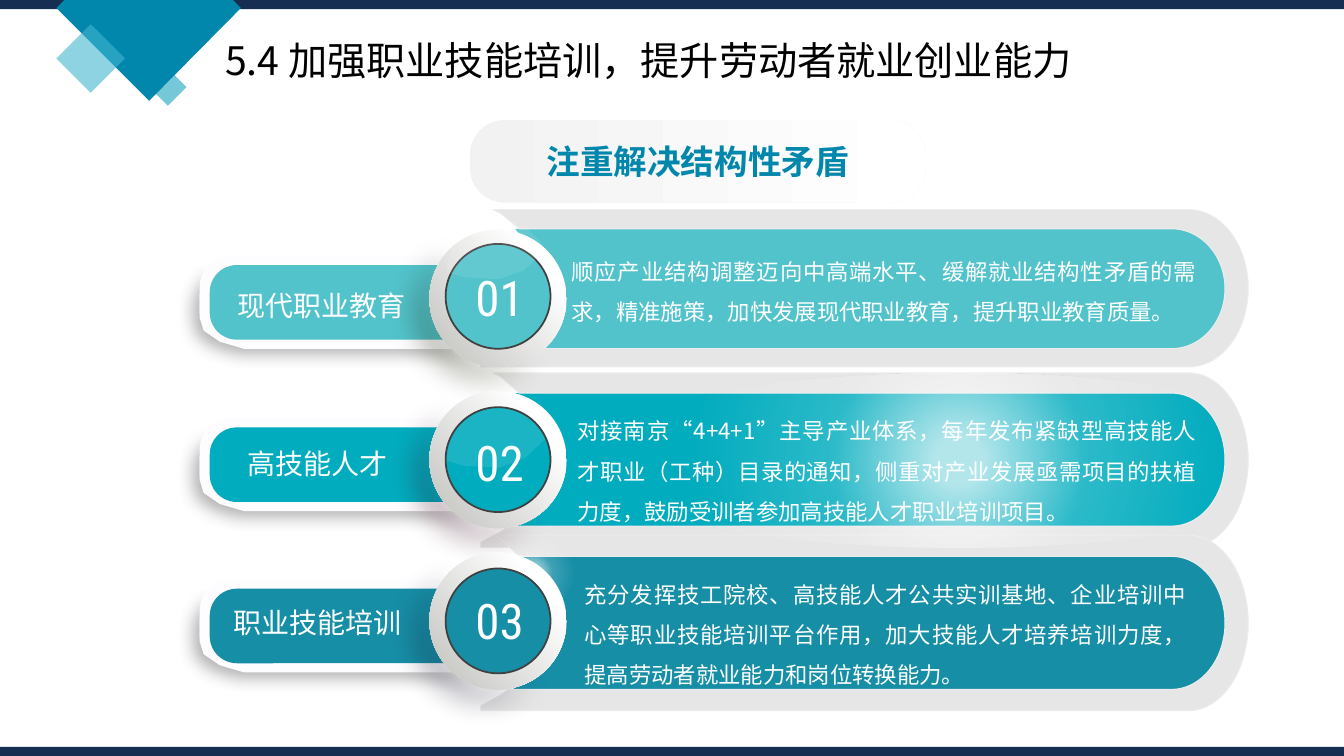
from math import cos, sin, radians
from lxml.etree import SubElement
from pptx import Presentation
from pptx.dml.color import RGBColor
from pptx.enum.shapes import MSO_SHAPE
from pptx.enum.text import MSO_ANCHOR, PP_ALIGN
from pptx.oxml import parse_xml
from pptx.oxml.ns import nsdecls, qn
from pptx.util import Pt

PX = 9144


class Theme:
    font, digit = "Noto Sans CJK SC", "Roboto Condensed"
    title, head, label, body, count = 28, 24, 20, 16, 35
    navy, blue, sky, aqua = "152E52", "0187AC", "41B7D0", "1AA4BE"
    white, black, tab, rim = "FFFFFF", "000000", "FDFCFE", "404040"
    grey, edge = "E6E6E6", "ECECEC"
    rows = "52C3CB", "01ACBE", "168EA6"
    shades = "1F2006", "380A21", "181930"
    pill = [(0, "F2F2F2", 100), (99, "FFFFFF", 100)]
    pearl = [(20, "FFFFFF", 100), (92, "C7C8C4", 100)]
    glow = [(6, "FFFFFF", 70), (32, "FFFFFF", 17), (67, "FFFFFF", 0)]


deck = Presentation()
deck.slide_width, deck.slide_height = 1333 * PX, 750 * PX
slide = deck.slides.add_slide(deck.slide_layouts[5])
shapes = slide.shapes


def form(kind, place, fill, alpha=100, angle=None, line=None, width=1, round=None, shade=None):
    if kind:
        shape = shapes.add_shape(kind, *[v * PX for v in place])
    else:
        dots = [(x * PX, y * PX) for x, y in place]
        pen = shapes.build_freeform(*dots[0])
        pen.add_line_segments(dots[1:], close=True)
        shape = pen.convert_to_shape()
    shape.shadow.inherit = False
    props = shape._element.spPr
    if round:
        shape.adjustments[0] = round
    if isinstance(fill, str):
        shape.fill.solid()
        shape.fill.fore_color.rgb = RGBColor.from_string(fill)
        if alpha < 100:
            SubElement(props.find(".//" + qn("a:srgbClr")), qn("a:alpha"), val=str(alpha * 1000))
    else:
        shape.fill.gradient()
        stops = "".join(
            f'<a:gs pos="{p * 1000}"><a:srgbClr val="{c}"><a:alpha val="{a * 1000}"/></a:srgbClr></a:gs>'
            for p, c, a in fill)
        way = (f'<a:lin ang="{angle * 60000}" scaled="0"/>' if angle is not None else
               '<a:path path="circle"><a:fillToRect l="50000" t="50000" r="50000" b="50000"/></a:path>')
        props.replace(props.find(qn("a:gradFill")), parse_xml(
            f'<a:gradFill {nsdecls("a")}><a:gsLst>{stops}</a:gsLst>{way}</a:gradFill>'))
    if line:
        shape.line.color.rgb = RGBColor.from_string(line)
        shape.line.width = Pt(width)
    else:
        shape.line.fill.background()
    if shade:
        tint, dark, blur, far = shade
        cast = SubElement(props.find(qn("a:effectLst")), qn("a:outerShdw"), blurRad=str(Pt(blur)),
                          dist=str(Pt(far)), dir=str(140 * 60000), algn="ctr", rotWithShape="0")
        tone = SubElement(cast, qn("a:srgbClr"), val=tint)
        SubElement(tone, qn("a:alpha"), val=str(dark * 1000))
    return shape


def write(host, text, size, color=Theme.white, font=Theme.font, bold=False,
          align=PP_ALIGN.CENTER, anchor=MSO_ANCHOR.TOP, space=None):
    if isinstance(host, tuple):
        host = shapes.add_textbox(*[v * PX for v in host])
    frame = host.text_frame
    frame.word_wrap = True
    frame.vertical_anchor = anchor
    para = frame.paragraphs[0]
    para.alignment = align
    if space:
        para.line_spacing = space
    run = para.add_run()
    run.text = text
    run.font.size, run.font.bold, run.font.name = Pt(size), bold, font
    run.font.color.rgb = RGBColor.from_string(color)
    mark = run._r.get_or_add_rPr()
    mark.set("lang", "zh-CN")
    SubElement(mark, qn("a:ea"), typeface=font)


title = shapes.title
title.left, title.top, title.width, title.height = [v * PX for v in (68, 26, 1150, 73)]
write(title, "5.4 加强职业技能培训，提升劳动者就业创业能力", Theme.title,
      color=Theme.black, anchor=MSO_ANCHOR.MIDDLE, space=0.9)

form(MSO_SHAPE.DIAMOND, (148, 68, 37, 37), Theme.aqua, alpha=60)
for top in (0, 741):
    form(MSO_SHAPE.RECTANGLE, (0, top, 1333, 9), Theme.navy)
form(None, [(64, 0), (231, 0), (239, 8), (148, 100), (56, 8)], Theme.blue)
form(MSO_SHAPE.DIAMOND, (56, 24, 68, 68), Theme.sky, alpha=60)

head = form(MSO_SHAPE.ROUNDED_RECTANGLE, (466, 119, 452, 82), Theme.pill, angle=0, round=0.423)
write(head, "注重解决结构性矛盾", Theme.head, color=Theme.blue, bold=True, anchor=MSO_ANCHOR.MIDDLE)

bands = [
    (208, 156, 227, 119, (557, 238, 640, 91),
     "顺应产业结构调整迈向中高端水平、缓解就业结构性矛盾的需求，精准施策，加快发展现代职业教育，提升职业教育质量。"),
    (370, 173, 390, 132, (563, 396, 634, 131),
     "对接南京“4+4+1”主导产业体系，每年发布紧缺型高技能人才职业（工种）目录的通知，侧重对产业发展亟需项目的扶植力度，鼓励受训者参加高技能人才职业培训项目。"),
    (531, 174, 552, 132, (570, 558, 617, 131),
     "充分发挥技工院校、高技能人才公共实训基地、企业培训中心等职业技能培训平台作用，加大技能人才培养培训力度，提高劳动者就业能力和岗位转换能力。"),
]
turn = [radians(a) for a in range(-90, 91, 5)]
for (top, high, core, deep, box, text), color in zip(bands, Theme.rows):
    mid, low = core + deep / 2, core + deep
    form(None, [(511, core)] + [(1166 + 50 * cos(a), mid + deep / 2 * sin(a)) for a in turn]
         + [(509, low), (533, low - 30), (542, mid), (533, core + 28)], color)
    outer = [(1179 + 59 * cos(a), top + high / 2 * (1 + sin(a))) for a in turn]
    inner = [(1162 + 53 * cos(a), mid + deep / 2 * sin(a)) for a in reversed(turn)]
    form(None, [(489, top)] + outer + [(477, top + high), (477, top + high - 5), (496, low + 6), (504, low)]
         + inner + [(515, core), (497, top + 4)], Theme.grey, line=Theme.edge, width=0.75)
    write(box, text, Theme.body, align=PP_ALIGN.JUSTIFY, space=1.5)

tabs = [(254, (212, 281, 214, 44), "现代职业教育"),
        (415, (212, 438, 206, 44), "高技能人才"),
        (575, (212, 596, 206, 44), "职业技能培训")]
under = [(198, 38), (209, 17), (478, 92), (242, 92), (218, 85), (202, 74), (198, 61)]
for (top, box, text), color in zip(tabs, Theme.rows):
    form(None, [(x, top + y) for x, y in under], Theme.tab, shade=(Theme.rim, 40, 12, 6))
    form(MSO_SHAPE.ROUNDED_RECTANGLE, (198, top, 324, 85), Theme.tab, round=0.364)
    form(MSO_SHAPE.ROUNDED_RECTANGLE, (208, top + 9, 305, 74), color, round=0.364)
    write(box, text, Theme.label)

for place in ((478, 530, 100, 76), (570, 370, 761, 173)):
    form(MSO_SHAPE.OVAL, place, Theme.glow)

discs = [(228, 242, 218, 10, 260, "01"), (388, 404, 405, 10, 424, "02"), (548, 564, 565, 0, 581, "03")]
for (top, face, shine, alpha, low, text), color, shade in zip(discs, Theme.rows, Theme.shades):
    moon = [(495 + 68 * cos(radians(a)), top + 67 + 68 * sin(radians(a))) for a in range(43, 243, 5)]
    moon += [(514 + 69 * cos(radians(a)), top + 52 + 69 * sin(radians(a))) for a in range(214, 69, -6)]
    form(None, moon, Theme.white, shade=(shade, 30, 19, 15))
    form(MSO_SHAPE.OVAL, (426, top, 136, 136), Theme.pearl, angle=140)
    form(MSO_SHAPE.OVAL, (442, face, 104, 104), color, line=Theme.rim, width=1.25)
    if alpha:
        arc = [(494 + 51 * cos(radians(a)), shine + 52 + 52 * sin(radians(a))) for a in range(180, 338, 6)]
        form(None, arc + [(520, shine + 50), (495, shine + 59), (460, shine + 57)], Theme.white, alpha=alpha)
    write((453, low, 85, 69), text, Theme.count, font=Theme.digit)

deck.save("out.pptx")
